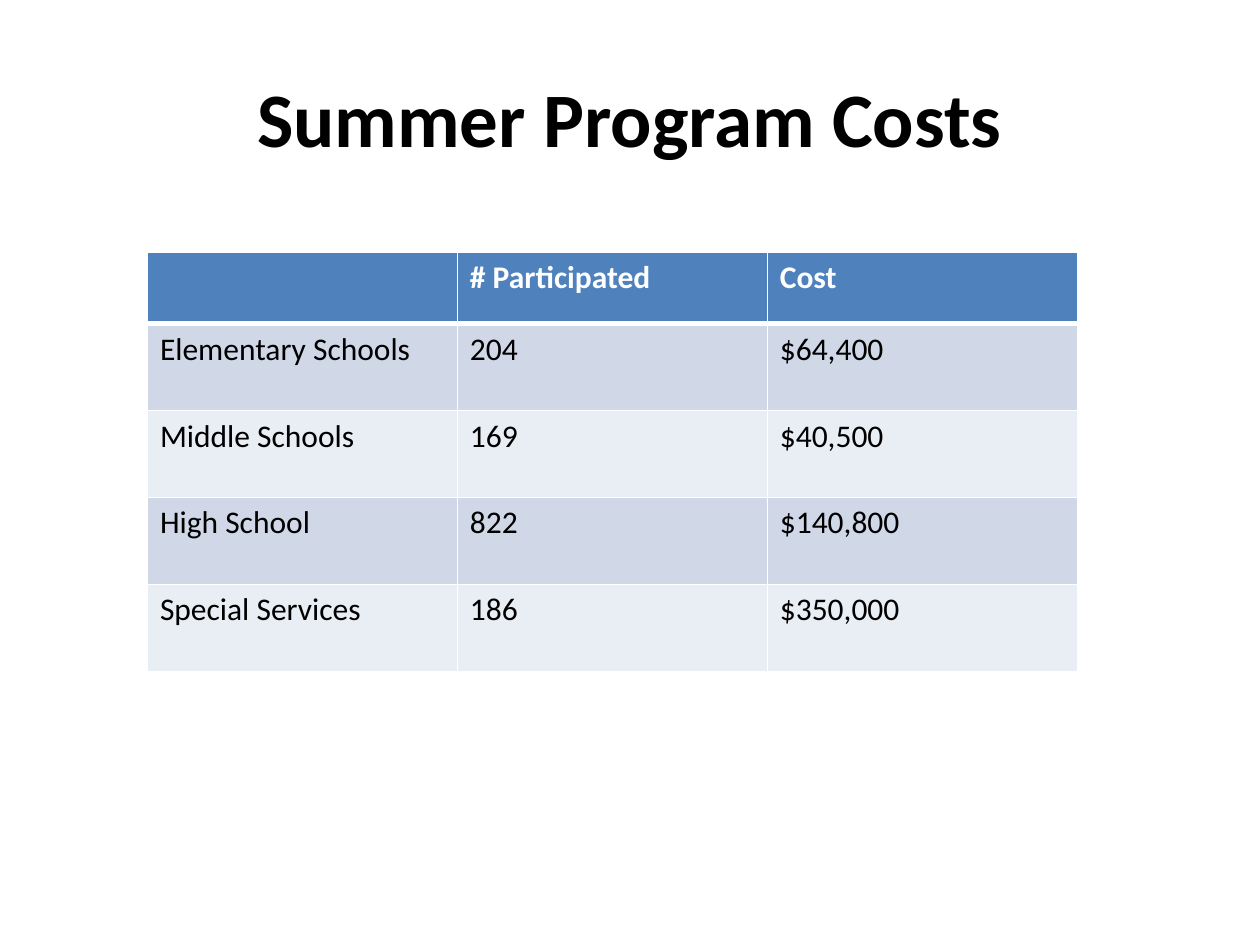
from lxml.etree import SubElement
from pptx import Presentation
from pptx.dml.color import RGBColor
from pptx.enum.text import MSO_ANCHOR, PP_ALIGN
from pptx.oxml.ns import qn
from pptx.util import Inches, Pt

WIDE, HIGH = 10, 7.5
ROWS = [
    ("", "# Participated", "Cost"),
    ("Elementary Schools", "204", "$64,400"),
    ("Middle Schools", "169", "$40,500"),
    ("High School", "822", "$140,800"),
    ("Special Services", "186", "$350,000"),
]


def color(text):
    return RGBColor.from_string(text)


class Deck:
    """Holds the style and the current slide, with lengths in inches."""

    font = "Calibri"
    ink, white, head = "000000", "FFFFFF", "4F81BD"
    bands = "D0D8E8", "E9EDF4"

    def __init__(self):
        self.file = Presentation()
        self.file.slide_width = Inches(WIDE)
        self.file.slide_height = Inches(HIGH)
        self.slide = self.file.slides.add_slide(self.file.slide_layouts[6])

    def style(self, frame, size, tint, bold):
        for line in frame.paragraphs:
            for font in [line.font] + [run.font for run in line.runs]:
                font.name, font.size, font.bold = self.font, Pt(size), bold
                font.color.rgb = color(tint)

    def title(self, text, left, top, width, height):
        box = self.slide.shapes.add_textbox(*map(Inches, (left, top, width, height)))
        frame = box.text_frame
        frame.word_wrap = True
        frame.vertical_anchor = MSO_ANCHOR.MIDDLE
        frame.text = text
        frame.paragraphs[0].alignment = PP_ALIGN.CENTER
        self.style(frame, 44, self.ink, True)

    def border(self, cell, side, width):
        props = cell._tc.get_or_add_tcPr()
        line = SubElement(props, qn(f"a:ln{side}"), w=str(Pt(width)))
        fill = SubElement(line, qn("a:solidFill"))
        SubElement(fill, qn("a:srgbClr"), val=self.white)

    def table(self, data, left, top, width, heights):
        size = map(Inches, (left, top, width, sum(heights)))
        grid = self.slide.shapes.add_table(len(data), len(data[0]), *size).table
        for col in grid.columns:
            col.width = Inches(width / len(data[0]))
        for row, (texts, height) in enumerate(zip(data, heights)):
            grid.rows[row].height = Inches(height)
            for col, text in enumerate(texts):
                self.cell(grid.cell(row, col), text, row)

    def cell(self, cell, text, row):
        first = row == 0
        thick = {"T": 1}, {"B": 3}
        for side in "LRTB":
            heavy = (row, side) in ((0, "B"), (1, "T"))
            self.border(cell, side, 3 if heavy else 1)
        cell.fill.solid()
        cell.fill.fore_color.rgb = color(self.head if first else self.bands[(row - 1) % 2])
        cell.text_frame.text = text
        self.style(cell.text_frame, 18, self.white if first else self.ink, first)


def main():
    deck = Deck()
    deck.title("Summer Program Costs", 0.05 * WIDE, 0.04 * HIGH, 0.9 * WIDE, HIGH / 6)
    deck.table(ROWS, 1.17, 2, 7.38, [0.57] + [0.69] * 4)
    deck.file.save("out.pptx")


if __name__ == "__main__":
    main()
